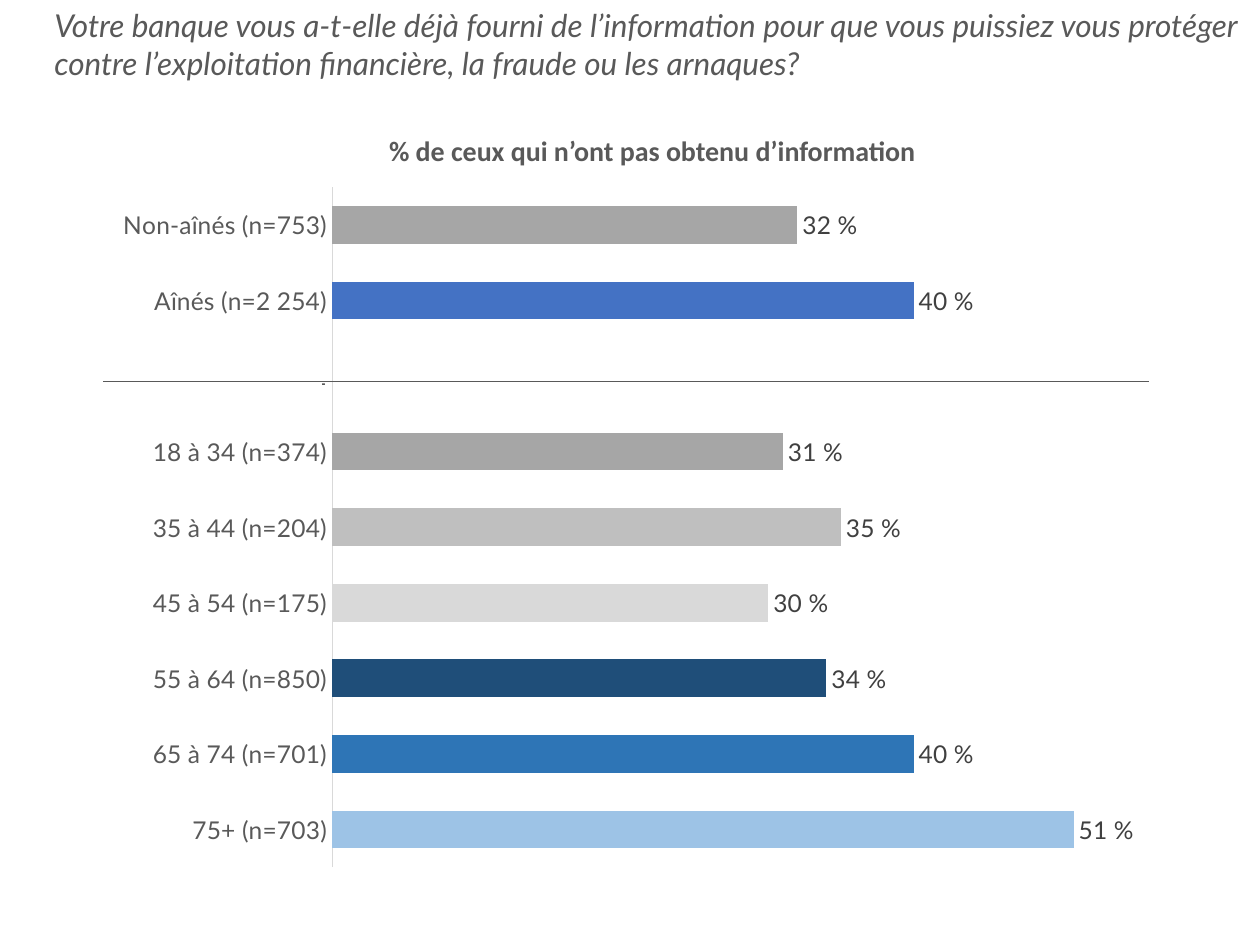
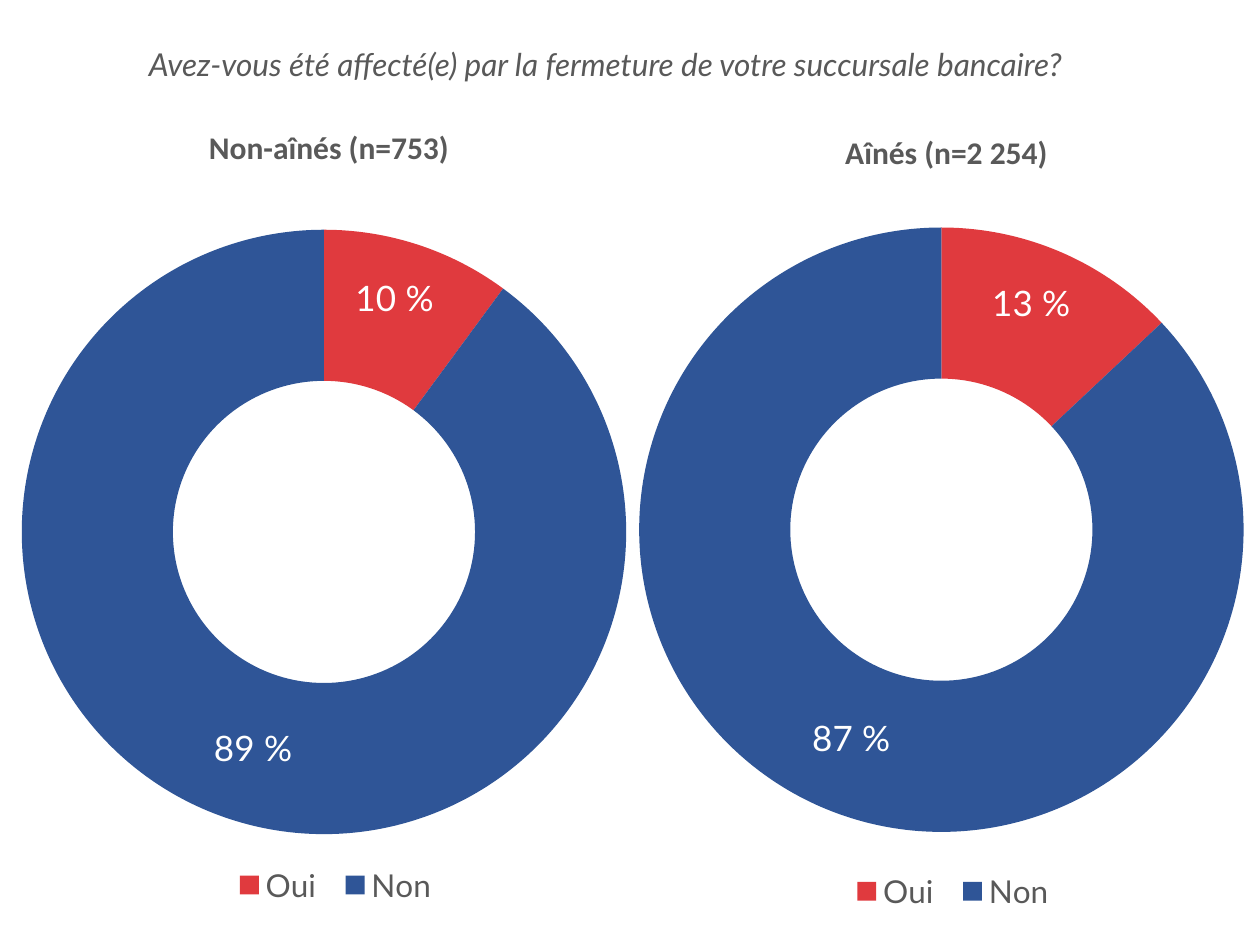
import pptx
import pptx.util
import pptx.chart.data
import pptx.dml.color
import pptx.enum.chart
import pptx.enum.shapes
import pptx.enum.text
import pptx.oxml
import pptx.oxml.ns

Pt = pptx.util.Pt
GREY = "595959"
WHITE = "FFFFFF"
PERCENT = "0\\ %"
NAMESPACES = pptx.oxml.ns.nsdecls("c", "a")


def paint(target, colour):
    if hasattr(target, "solid"):
        target.solid()
        target.fore_color.rgb = pptx.dml.color.RGBColor.from_string(colour)
    else:
        target.color.rgb = pptx.dml.color.RGBColor.from_string(colour)


def place(element, index, **sizes):
    for previous in element.findall(pptx.oxml.ns.qn("c:layout")):
        element.remove(previous)
    modes = {"xMode": "edge", "yMode": "edge"} if "w" in sizes else {}
    target = {"layoutTarget": "inner"} if element.tag.endswith("plotArea") else {}
    entries = "".join(f'<c:{name} val="{value}"/>' for name, value in {**target, **modes, **sizes}.items())
    element.insert(index, pptx.oxml.parse_xml(
        f"<c:layout {NAMESPACES}><c:manualLayout>{entries}</c:manualLayout></c:layout>"))


deck = pptx.Presentation()
deck.slide_width = Pt(720)
deck.slide_height = Pt(540)

questions = [
    ("Votre banque vous a-t-elle déjà fourni de l’information pour que vous puissiez vous protéger "
     "contre l’exploitation financière, la fraude ou les arnaques?", (23.8, 0, 702.7, 72.7)),
    ("Avez-vous été affecté(e) par la fermeture de votre succursale bancaire?", (77.8, 22.3, 589.7, 28.8)),
]
pages = []
for question, frame in questions:
    page = deck.slides.add_slide(deck.slide_layouts[5])
    title = page.shapes.title
    title.left, title.top, title.width, title.height = map(Pt, frame)
    title.text_frame.auto_size = pptx.enum.text.MSO_AUTO_SIZE.NONE
    title.text_frame.vertical_anchor = pptx.enum.text.MSO_ANCHOR.TOP
    para = title.text_frame.paragraphs[0]
    para.alignment = pptx.enum.text.PP_ALIGN.LEFT
    span = para.add_run()
    span.text = question
    span.font.name = "Lato"
    span.font.size = Pt(18)
    span.font.italic = True
    paint(span.font, GREY)
    pages.append(page)
bank_page, branch_page = pages

groups = [
    ("Non-aînés (n=753)", 0.32, "A6A6A6"),
    ("Aînés (n=2 254)", 0.40, "4472C4"),
    ("Column1", None, None),
    ("18 à 34 (n=374)", 0.31, "A6A6A6"),
    ("35 à 44 (n=204)", 0.35, "BFBFBF"),
    ("45 à 54 (n=175)", 0.30, "D9D9D9"),
    ("55 à 64 (n=850)", 0.34, "1F4E79"),
    ("65 à 74 (n=701)", 0.40, "2E75B6"),
    ("75+ (n=703)", 0.51, "9DC3E6"),
]
answers = [("Oui", "E03A3E"), ("Non", "2F5597")]
bar = pptx.enum.chart.XL_CHART_TYPE.BAR_CLUSTERED
ring = pptx.enum.chart.XL_CHART_TYPE.DOUGHNUT
ring_names, ring_colours = zip(*answers)
bar_names, bar_values, bar_colours = zip(*groups)
charts = [
    (bank_page, bar, (25.9, 95, 674.6, 412.6), bar_names, bar_values, bar_colours,
     (0.243, 0.029, 0.739, 0.942), 14, "404040"),
    (branch_page, ring, (240.5, 87.8, 524.2, 441.4), ring_names, (0.13, 0.87), ring_colours,
     (0.238, 0.095, 0.659, 0.784), 20, WHITE),
    (branch_page, ring, (-112.3, 84.2, 524.2, 441.4), ring_names, (0.10, 0.89), ring_colours,
     (0.238, 0.106, 0.659, 0.784), 20, WHITE),
]
for page, kind, frame, names, values, colours, plot_box, label_size, label_colour in charts:
    data = pptx.chart.data.CategoryChartData(number_format="0%")
    data.categories = names
    data.add_series("Series 1", values)
    chart = page.shapes.add_chart(kind, *map(Pt, frame), data).chart
    chart.has_title = False
    chart.has_legend = kind == ring
    chart.font.name = "Lato"
    chart.font.size = Pt(label_size)
    chart._chartSpace.chart.addnext(pptx.oxml.parse_xml(
        f"<c:spPr {NAMESPACES}><a:noFill/><a:ln><a:noFill/></a:ln></c:spPr>"))
    place(chart._chartSpace.chart.plotArea, 0, **dict(zip("xywh", plot_box)))

    plot = chart.plots[0]
    plot.vary_by_categories = kind == ring
    series = plot.series[0]
    if kind == bar:
        paint(series.format.fill, "A6A6A6")
    for index, colour in enumerate(colours):
        if colour:
            paint(series.points[index].format.fill, colour)
    labels = series.data_labels
    labels.show_value = True
    labels.show_percentage = False
    labels.number_format = PERCENT
    labels.number_format_is_linked = False
    fonts = [labels.font]

    if kind == bar:
        plot.gap_width = 100
        labels.position = pptx.enum.chart.XL_LABEL_POSITION.OUTSIDE_END
        axis = chart.category_axis
        axis.reverse_order = True
        axis.major_tick_mark = pptx.enum.chart.XL_TICK_MARK.NONE
        axis.tick_labels.font.size = Pt(14)
        paint(axis.tick_labels.font, GREY)
        paint(axis.format.line, "D9D9D9")
        axis.format.line.width = Pt(0.75)
        chart.value_axis.visible = False
        chart.value_axis.has_major_gridlines = False
        chart.value_axis.minimum_scale = 0
        chart.value_axis.maximum_scale = 0.6
    else:
        fonts.append(series.points[0].data_label.font)
        label = labels._element.find(pptx.oxml.ns.qn("c:dLbl"))
        place(label, 1, x=0, y=-0.025)
        label.insert(2, pptx.oxml.parse_xml(
            f'<c:numFmt {NAMESPACES} formatCode="{PERCENT}" sourceLinked="0"/>'))
        legend = chart.legend
        legend.position = pptx.enum.chart.XL_LEGEND_POSITION.BOTTOM
        legend.include_in_layout = False
        legend.font.size = Pt(18)
        legend.font.bold = False
        paint(legend.font, GREY)
        place(legend._element, 1, x=0.455, y=0.92, w=0.25, h=0.07)
    for font in fonts:
        font.name = "Lato"
        font.size = Pt(label_size)
        font.bold = False
        paint(font, label_colour)

headings = [
    (bank_page, "% de ceux qui n’ont pas obtenu d’information", 16, (215.3, 72.7, 328.3, 22.3)),
    (branch_page, "Aînés (n=2 254)", 18, (475.9, 72.7, 131, 28.8)),
    (branch_page, "Non-aînés (n=753)", 18, (112.3, 69.8, 152.6, 28.8)),
]
for page, heading, size, frame in headings:
    box = page.shapes.add_textbox(*map(Pt, frame))
    box.text_frame.word_wrap = False
    span = box.text_frame.paragraphs[0].add_run()
    span.text = heading
    span.font.name = "Calibri"
    span.font.size = Pt(size)
    span.font.bold = True
    paint(span.font, GREY)

label_cover = bank_page.shapes.add_shape(
    pptx.enum.shapes.MSO_SHAPE.RECTANGLE, Pt(103.7), Pt(198.7), Pt(79.9), Pt(26.6))
label_cover.shadow.inherit = False
paint(label_cover.fill, WHITE)
paint(label_cover.line, WHITE)
label_cover.line.width = Pt(1)

divider = bank_page.shapes.add_connector(
    pptx.enum.shapes.MSO_CONNECTOR.STRAIGHT, Pt(59), Pt(218.2), Pt(656.6), Pt(218.2))
paint(divider.line, GREY)
divider.line.width = Pt(0.5)
divider._element.spPr.append(pptx.oxml.parse_xml(f"<a:effectLst {NAMESPACES}/>"))

deck.save("out.pptx")
